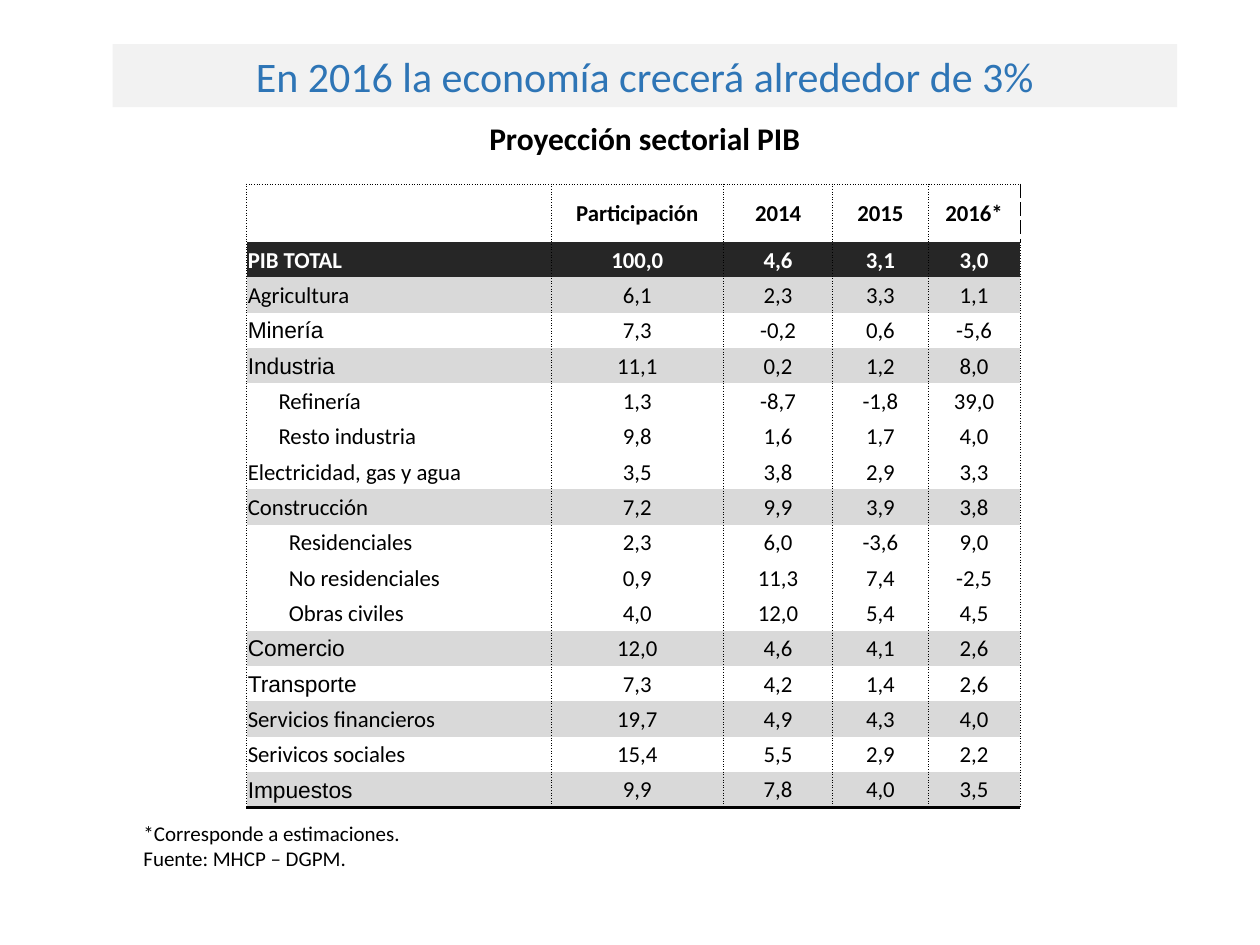
from lxml import etree
from pptx import Presentation
from pptx.dml.color import RGBColor
from pptx.enum.shapes import MSO_SHAPE
from pptx.enum.text import MSO_ANCHOR, PP_ALIGN
from pptx.oxml.ns import qn
from pptx.util import Pt

RECT = MSO_SHAPE.RECTANGLE
TOP, MID = MSO_ANCHOR.TOP, MSO_ANCHOR.MIDDLE
LEFT, CENTER = PP_ALIGN.LEFT, PP_ALIGN.CENTER

BLACK = RGBColor(0x00, 0x00, 0x00)
WHITE = RGBColor(0xFF, 0xFF, 0xFF)
BLUE = RGBColor(0x2E, 0x75, 0xB6)
PALE = RGBColor(0xF2, 0xF2, 0xF2)
GRAY = RGBColor(0xD9, 0xD9, 0xD9)
DARK = RGBColor(0x26, 0x26, 0x26)

PLAIN = "{2D5ABB26-0587-4C30-8999-92F81FD0307C}"  # table style without grid
WIDTHS = [87, 43.5, 43.5, 98.5, 62.5, 54.5, 52.5]
HEAD = ["Participación", "2014", "2015", "2016*"]
DOT, DASH, THICK = (0.5, "dot"), (0.5, "dash"), (2, "solid")

# How the three label columns are joined: first and last column of each group
WHOLE, SPLIT, PAIR = [(0, 2)], [(0, 0), (1, 2)], [(0, 1), (2, 2)]

# Label, values, fill, label groups, indent, label font
ROWS = [
    ("PIB TOTAL", "100,0 4,6 3,1 3,0", DARK, WHOLE, 0, "Calibri"),
    ("Agricultura", "6,1 2,3 3,3 1,1", GRAY, WHOLE, 0, "Calibri"),
    ("Minería", "7,3 -0,2 0,6 -5,6", WHITE, SPLIT, 0, "Arial"),
    ("Industria", "11,1 0,2 1,2 8,0", GRAY, SPLIT, 0, "Arial"),
    ("Refinería", "1,3 -8,7 -1,8 39,0", WHITE, WHOLE, 17.6, "Calibri"),
    ("Resto industria", "9,8 1,6 1,7 4,0", WHITE, WHOLE, 17.6, "Calibri"),
    ("Electricidad, gas y agua", "3,5 3,8 2,9 3,3", WHITE, WHOLE, 0, "Calibri"),
    ("Construcción", "7,2 9,9 3,9 3,8", GRAY, WHOLE, 0, "Calibri"),
    ("Residenciales", "2,3 6,0 -3,6 9,0", WHITE, WHOLE, 23.5, "Calibri"),
    ("No residenciales", "0,9 11,3 7,4 -2,5", WHITE, WHOLE, 23.5, "Calibri"),
    ("Obras civiles", "4,0 12,0 5,4 4,5", WHITE, WHOLE, 23.5, "Calibri"),
    ("Comercio", "12,0 4,6 4,1 2,6", GRAY, PAIR, 0, "Arial"),
    ("Transporte", "7,3 4,2 1,4 2,6", WHITE, PAIR, 0, "Arial"),
    ("Servicios financieros", "19,7 4,9 4,3 4,0", GRAY, WHOLE, 0, "Calibri"),
    ("Serivicos sociales", "15,4 5,5 2,9 2,2", WHITE, WHOLE, 0, "Calibri"),
    ("Impuestos", "9,9 7,8 4,0 3,5", GRAY, SPLIT, 0, "Arial"),
]


def write(frame, text, size=13, color=BLACK, bold=False, align=LEFT,
          font="Calibri", indent=0):
    """Write each line of text as one paragraph."""
    for i, line in enumerate(text.split("\n")):
        para = frame.add_paragraph() if i else frame.paragraphs[0]
        para.alignment = align
        if indent:
            props = para._p.get_or_add_pPr()
            props.set("marL", str(Pt(indent)))
            props.set("indent", "0")
        run = para.add_run()
        run.text = line
        run.font.size = Pt(size)
        run.font.name = font
        run.font.bold = bold
        run.font.color.rgb = color


class Page:
    def __init__(self, slide):
        self.slide = slide

    def bar(self, x, y, w, h, text, **style):
        box = self.slide.shapes.add_shape(RECT, Pt(x), Pt(y), Pt(w), Pt(h))
        box.shadow.inherit = False
        box.fill.solid()
        box.fill.fore_color.rgb = PALE
        box.line.fill.background()
        box.text_frame.word_wrap = True
        box.text_frame.vertical_anchor = TOP
        write(box.text_frame, text, **style)

    def note(self, x, y, w, h, text, **style):
        box = self.slide.shapes.add_textbox(Pt(x), Pt(y), Pt(w), Pt(h))
        box.text_frame.word_wrap = True
        write(box.text_frame, text, **style)

    def grid(self, x, y, widths, heights):
        table = self.slide.shapes.add_table(
            len(heights), len(widths), Pt(x), Pt(y),
            Pt(sum(widths)), Pt(sum(heights))).table
        table.first_row = table.horz_banding = False
        table._tbl.tblPr.find(qn("a:tableStyleId")).text = PLAIN
        for col, width in zip(table.columns, widths):
            col.width = Pt(width)
        for row, height in zip(table.rows, heights):
            row.height = Pt(height)
        return table

    def cell(self, cell, fill, edges, text="", **style):
        cell.margin_left = cell.margin_right = cell.margin_top = Pt(0.7)
        cell.margin_bottom = 0
        cell.vertical_anchor = MID
        props = cell._tc.get_or_add_tcPr()
        for side in "LRTB":
            if side in edges:
                self.edge(props, side, *edges[side])
        cell.fill.solid()
        cell.fill.fore_color.rgb = fill
        if text:
            write(cell.text_frame, text, **style)
        else:  # keep empty cells from stretching the row
            para = cell.text_frame.paragraphs[0]._p
            etree.SubElement(para, qn("a:endParaRPr"), sz="1000")

    def edge(self, props, side, width, dash):
        line = etree.SubElement(props, qn("a:ln" + side), w=str(Pt(width)))
        fill = etree.SubElement(line, qn("a:solidFill"))
        etree.SubElement(fill, qn("a:srgbClr"), val=str(BLACK))
        etree.SubElement(line, qn("a:prstDash"), val=dash)


def main():
    deck = Presentation()
    deck.slide_width, deck.slide_height = Pt(720), Pt(540)
    page = Page(deck.slides.add_slide(deck.slide_layouts[6]))

    # Titles and source
    page.bar(64.3, 25.2, 608.4, 36, "En 2016 la economía crecerá alrededor de 3%",
             size=24, color=BLUE, align=CENTER)
    page.note(137.5, 64.3, 462, 29, "Proyección sectorial PIB",
              size=18, bold=True, align=CENTER)
    page.note(74.9, 465.1, 448, 36,
              "*Corresponde a estimaciones.\nFuente: MHCP – DGPM.", size=12)

    # Table: two header rows, then one row per sector
    table = page.grid(140.9, 105.2, WIDTHS, [16.6] * 2 + [20.2] * len(ROWS))
    head = [("", HEAD, WHITE, SPLIT, 0, "Calibri"),
            ("", [""] * 4, WHITE, SPLIT, 0, "Calibri")]
    body = [(name, nums.split(), *rest) for name, nums, *rest in ROWS]
    last = len(head + body) - 1
    for r, (name, nums, fill, groups, indent, font) in enumerate(head + body):
        bold = r <= 2
        ink = WHITE if fill == DARK else BLACK
        rule = {"T": DOT} if r == 0 else {"B": THICK} if r == last else {}
        for a, b in groups:
            sides = {"L": DOT} if a == 0 else {}
            if b == 2:
                sides["R"] = DOT
            for c in range(a, b + 1):
                page.cell(table.cell(r, c), fill, {**sides, **rule},
                          name if c == 0 else "", color=ink, bold=bold,
                          indent=indent, font=font)
            if b > a:
                table.cell(r, a).merge(table.cell(r, b))
        for c, num in enumerate(nums, 3):
            right = DASH if r < 2 and c == 6 else DOT
            page.cell(table.cell(r, c), fill, {"L": DOT, "R": right, **rule},
                      num, color=ink, bold=bold, align=CENTER)
    for c in range(3, 7):
        table.cell(0, c).merge(table.cell(1, c))

    deck.save("out.pptx")


if __name__ == "__main__":
    main()
